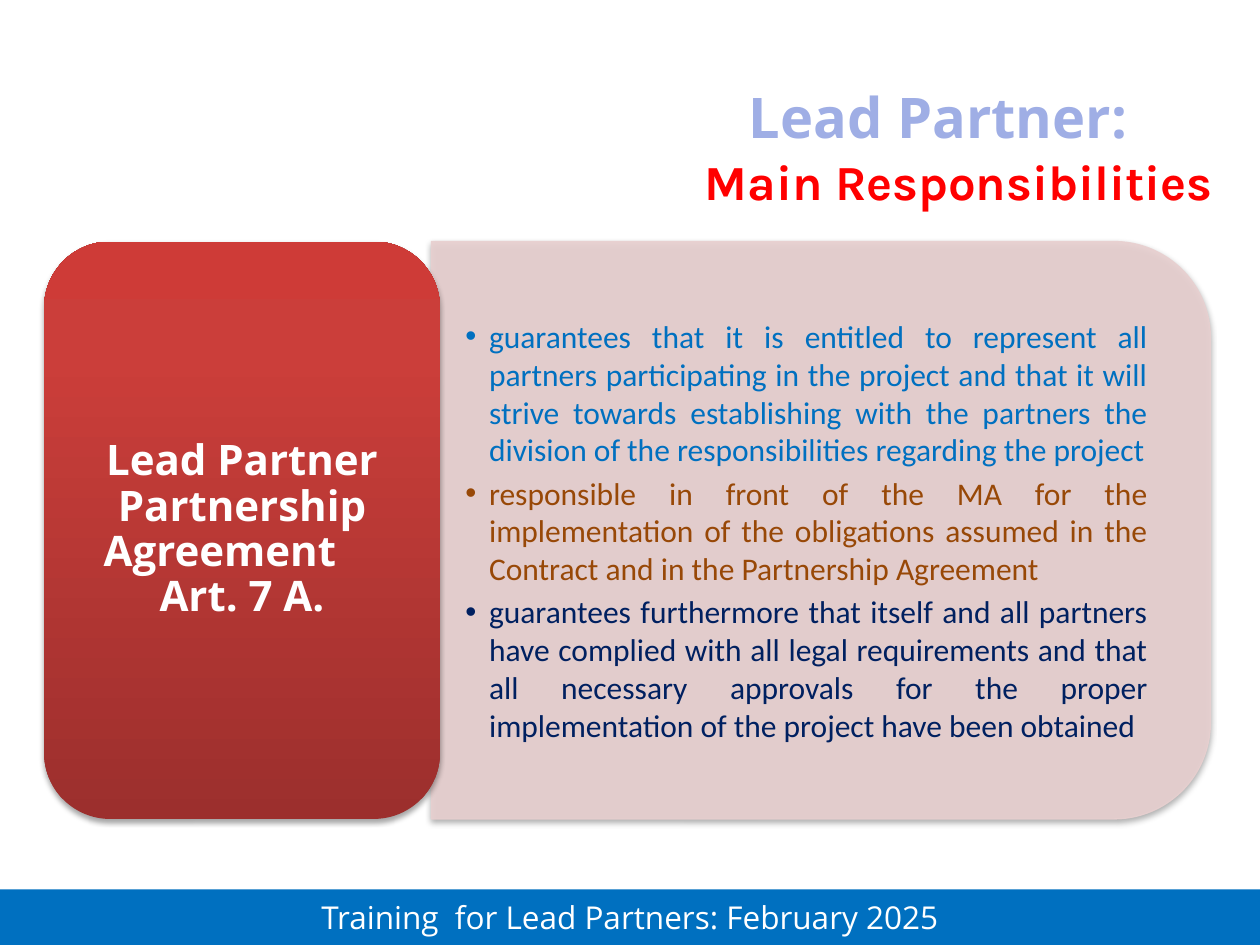
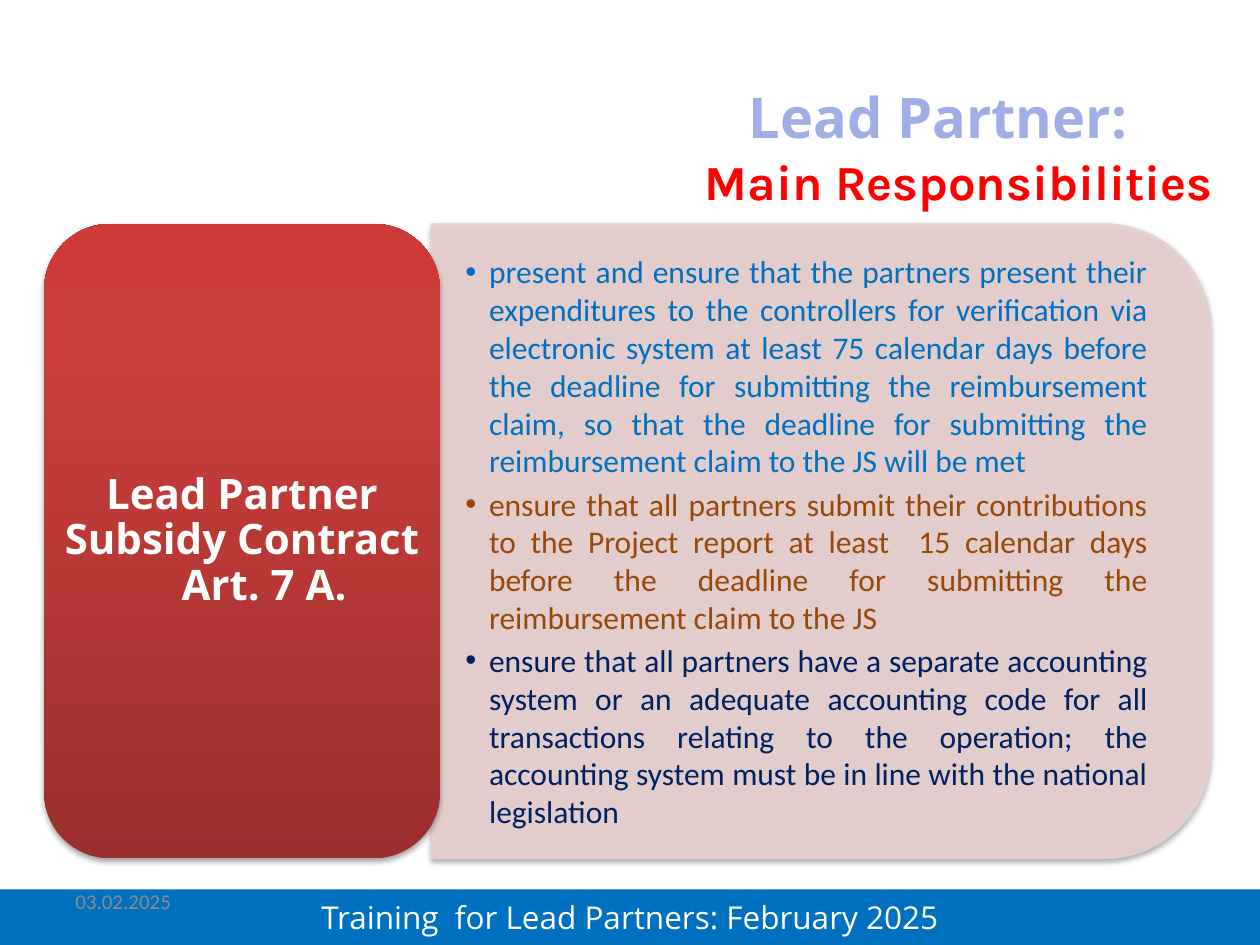
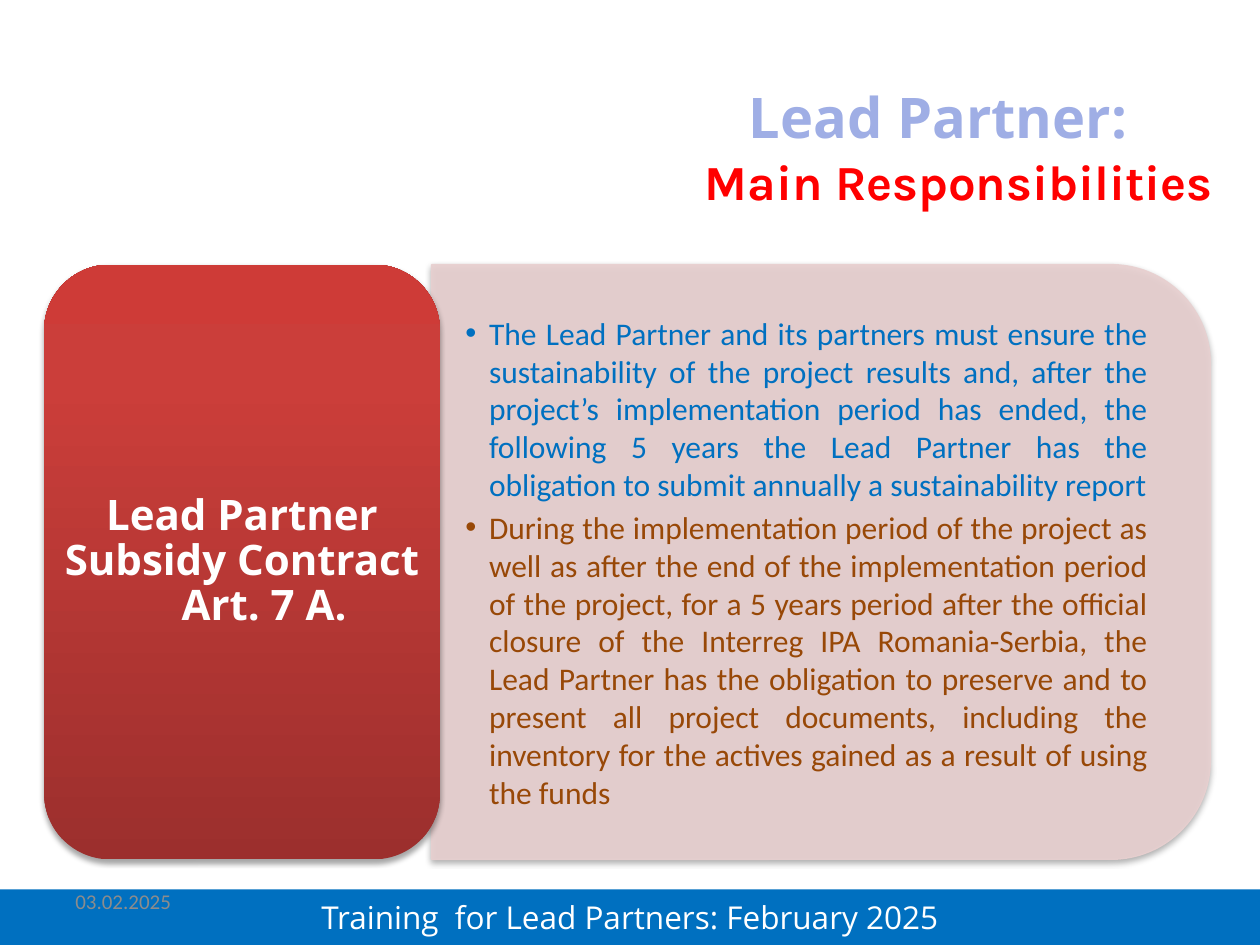
from pptx import Presentation
from pptx.dml.color import RGBColor as RGB
from pptx.enum.shapes import MSO_SHAPE as Shape
from pptx.enum.text import MSO_ANCHOR as Anchor, PP_ALIGN as Align
from pptx.oxml import parse_xml
from pptx.oxml.ns import nsdecls, qn
from pptx.util import Cm, Pt

WHITE = RGB(0xFF, 0xFF, 0xFF)
BLUE = RGB(0x00, 0x70, 0xC0)
BROWN = RGB(0x98, 0x48, 0x07)
NAVY = RGB(0x00, 0x20, 0x60)
LILAC = RGB(0x9F, 0xAE, 0xE5)
RED = RGB(0xFF, 0x00, 0x00)
PINK = RGB(0xE8, 0xD0, 0xD0)
GREY = RGB(0x8C, 0x8C, 0x8C)
DARK = RGB(0x9C, 0x2F, 0x2D)
MID = RGB(0xCB, 0x3E, 0x3A)
LIGHT = RGB(0xCE, 0x3B, 0x37)

NS = nsdecls("a")
SHADOW = (
    f'<a:effectLst {NS}><a:outerShdw blurRad="40000" dist="23000" dir="5400000" rotWithShape="0">'
    '<a:srgbClr val="000000"><a:alpha val="35000"/></a:srgbClr></a:outerShdw></a:effectLst>'
)
STOPS = "".join(
    f'<a:gs pos="{pos}"><a:srgbClr val="{tone}"/></a:gs>'
    for pos, tone in [(0, DARK), (80000, MID), (100000, LIGHT)]
)
GRAD = (
    f'<a:gradFill {NS} rotWithShape="1"><a:gsLst>{STOPS}</a:gsLst>'
    '<a:lin ang="16200000" scaled="0"/></a:gradFill>'
)
WIDTH = 25.4
SUBSIDY = [("Lead Partner Subsidy Contract", 0, 0), ("Art. 7 A.", 0.89, 0)]

pages = [
    (10.69, 11.64,
     [("Lead Partner Partnership", 0, 0), ("Agreement", 0, 0.89), ("Art. 7 A.", 0, 0)],
     ["guarantees that it is entitled to represent all partners participating in the project and that it will strive towards establishing with the partners the division of the responsibilities regarding the project",
      "responsible in front of the MA for the implementation of the obligations assumed in the Contract and in the Partnership Agreement",
      "guarantees furthermore that itself and all partners have complied with all legal requirements and that all necessary approvals for the proper implementation of the project have been obtained"],
     ""),
    (10.91, 12.79, SUBSIDY,
     ["present and ensure that the partners present their expenditures to the controllers for verification via electronic system at least 75 calendar days before the deadline for submitting the reimbursement claim, so that the deadline for submitting the reimbursement claim to the JS will be met",
      "ensure that all partners submit their contributions to the Project report at least  15 calendar days before the deadline for submitting the reimbursement claim to the JS",
      "ensure that all partners have a separate accounting system or an adequate accounting code for all transactions relating to the operation; the accounting system must be in line with the national legislation"],
     "03.02.2025"),
    (11.33, 11.99, SUBSIDY,
     ["The Lead Partner and its partners must ensure the sustainability of the project results and, after the project’s implementation period has ended, the following 5 years the Lead Partner has the obligation to submit annually a sustainability report",
      "During the implementation period of the project as well as after the end of the implementation period of the project, for a 5 years period after the official closure of the Interreg IPA Romania-Serbia, the Lead Partner has the obligation to preserve and to present all project documents, including the inventory for the actives gained as a result of using the funds"],
     "03.02.2025"),
]


def write(para, text, face, size, tone, align, bold=False):
    para.text = text
    para.alignment = align
    font = para.font
    font.name, font.size, font.bold = face, Pt(size), bold
    font.color.rgb = tone


def add_box(slide, left, top, width, height, anchor=Anchor.MIDDLE):
    box = slide.shapes.add_textbox(Cm(left), Cm(top), Cm(width), Cm(height))
    frame = box.text_frame
    frame.word_wrap = True
    frame.vertical_anchor = anchor
    return frame


deck = Presentation()
deck.slide_width, deck.slide_height = Cm(WIDTH), Cm(19.05)

for mid, high, label, points, date in pages:
    slide = deck.slides.add_slide(deck.slide_layouts[6])
    shapes = slide.shapes

    band = shapes.add_shape(Shape.RECTANGLE, 0, Cm(17.93), Cm(WIDTH), Cm(1.12))
    band.shadow.inherit = False
    band.fill.solid()
    band.fill.fore_color.rgb = BLUE
    band.line.fill.background()
    band.text_frame.vertical_anchor = Anchor.MIDDLE
    write(band.text_frame.paragraphs[0], "Training  for Lead Partners: February 2025",
          "Open Sans", 18, WHITE, Align.CENTER)

    title = add_box(slide, 13.11, 1.37, 11.61, 1.96)
    write(title.paragraphs[0], "Lead Partner:", "Open Sans", 32, LILAC, Align.CENTER, True)
    topic = add_box(slide, 11.1, 2.92, 13.59, 1.45, Anchor.TOP)
    write(topic.paragraphs[0], "Main Responsibilities", "Karla", 28, RED, Align.RIGHT, True)

    long = 15.7
    panel = shapes.add_shape(Shape.ROUND_2_SAME_RECTANGLE, Cm(16.55 - high / 2),
                             Cm(mid - long / 2), Cm(high), Cm(long))
    panel.rotation = 90
    panel.fill.solid()
    panel.fill.fore_color.rgb = PINK
    panel.line.color.rgb = PINK
    panel.line.width = Pt(0.75)
    props = panel._element.spPr
    for tint in props.iter(qn("a:srgbClr")):
        tint.append(parse_xml(f'<a:alpha {NS} val="90000"/>'))
    props.append(parse_xml(SHADOW))

    tall = 0.9 * high
    body = add_box(slide, 8.69, mid - tall / 2, 15.14, tall)
    body.margin_left = body.margin_right = Cm(0.69)
    body.margin_top = body.margin_bottom = Cm(0.36)
    for i, (point, tone) in enumerate(zip(points, [BLUE, BROWN, NAVY])):
        para = body.add_paragraph() if i else body.paragraphs[0]
        form = para._p.get_or_add_pPr()
        form.set("marL", str(Cm(0.48)))
        form.set("indent", str(-Cm(0.48)))
        form.append(parse_xml(f'<a:buFont {NS} typeface="Arial"/>'))
        form.append(parse_xml(f'<a:buChar {NS} char="•"/>'))
        write(para, point, "Calibri", 18, tone, Align.JUSTIFY)
        para.space_after = Pt(3)

    tab = shapes.add_shape(Shape.ROUNDED_RECTANGLE, Cm(0.89), Cm(mid - high / 2),
                           Cm(7.98), Cm(high))
    tab.line.fill.background()
    props = tab._element.spPr
    props.insert(2, parse_xml(GRAD))
    props.append(parse_xml(SHADOW))
    frame = tab.text_frame
    frame.word_wrap = True
    frame.vertical_anchor = Anchor.MIDDLE
    frame.margin_left = frame.margin_right = frame.margin_top = frame.margin_bottom = 0
    for i, (line, left, right) in enumerate(label):
        para = frame.add_paragraph() if i else frame.paragraphs[0]
        form = para._p.get_or_add_pPr()
        form.set("marL", str(Cm(left)))
        form.set("marR", str(Cm(right)))
        write(para, line, "Open Sans", 24, WHITE, Align.CENTER, True)
        para.line_spacing = 0.9

    if date:
        stamp = add_box(slide, 1.27, 17.65, 5.92, 1.02)
        write(stamp.paragraphs[0], date, "Calibri", 12, GREY, Align.LEFT)

deck.save("out.pptx")
